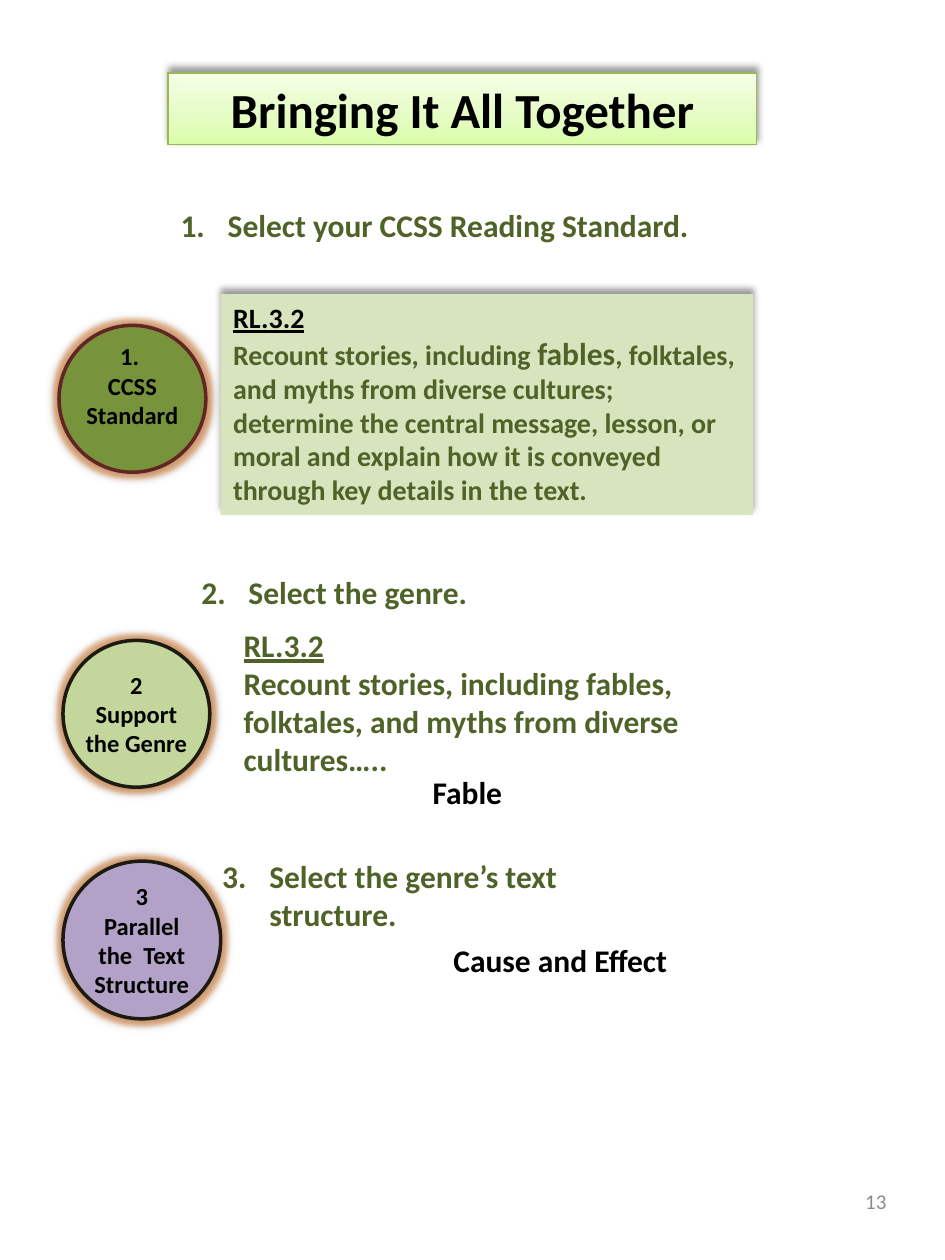
import copy

import pptx
import pptx.dml.color
import pptx.enum.shapes
import pptx.enum.text
import pptx.oxml
import pptx.oxml.ns
import pptx.util

Cm = pptx.util.Cm
Pt = pptx.util.Pt
RGBColor = pptx.dml.color.RGBColor
MSO_SHAPE = pptx.enum.shapes.MSO_SHAPE
PP_ALIGN = pptx.enum.text.PP_ALIGN
MSO_ANCHOR = pptx.enum.text.MSO_ANCHOR
qn = pptx.oxml.ns.qn

BLACK = RGBColor(0x00, 0x00, 0x00)
GRAY = RGBColor(0x8C, 0x8C, 0x8C)
DARK_GREEN = RGBColor(0x4F, 0x62, 0x28)
BANNER_LINE = RGBColor(0x98, 0xB9, 0x55)
BANNER_STOPS = [
    (0, RGBColor(0xDA, 0xFD, 0xA7)),
    (0.35, RGBColor(0xE4, 0xFC, 0xC2)),
    (1, RGBColor(0xF5, 0xFF, 0xE7)),
]
PANEL_GREEN = RGBColor(0xD7, 0xE4, 0xBD)
OLIVE = RGBColor(0x77, 0x93, 0x3C)
LIGHT_OLIVE = RGBColor(0xC3, 0xD6, 0x9B)
LILAC = RGBColor(0xB3, 0xA2, 0xC7)
MAROON = RGBColor(0x63, 0x25, 0x23)
NEAR_BLACK = RGBColor(0x1D, 0x1B, 0x11)
GLOW_ORANGE = RGBColor(0xE4, 0x6C, 0x0A)

BODY = {"size": Pt(18), "bold": True, "name": "Calibri"}
STANDARD = {**BODY, "size": Pt(16)}
BADGE = {**BODY, "size": Pt(14)}
TITLE = {**BODY, "size": Pt(28)}
PAGE = {"size": Pt(12), "name": "Calibri"}


def place(box, left, top, width, height):
    """Return slide lengths for a part offset inside a box, given in cm."""
    return Cm(box[0] + left), Cm(box[1] + top), Cm(width), Cm(height)


def write(shape, paragraphs, color, align=PP_ALIGN.LEFT, anchor=MSO_ANCHOR.TOP):
    """Fill a shape with paragraphs, each a list of (text, format) runs."""
    frame = shape.text_frame
    frame.word_wrap = True
    frame.vertical_anchor = anchor
    for index, runs in enumerate(paragraphs):
        paragraph = frame.add_paragraph() if index else frame.paragraphs[0]
        paragraph.alignment = align
        for text, formats in runs:
            run = paragraph.add_run()
            run.text = text
            run.font.color.rgb = color
            for key, value in formats.items():
                setattr(run.font, key, value)
    return frame


def add_effects(shape, blur, distance, glow=None):
    """Give a shape a soft upward shadow and an optional glow."""
    shape.shadow.inherit = False
    effects = shape._element.spPr.find(qn("a:effectLst"))
    parts = [("outerShdw", {"blurRad": Pt(blur), "dist": Pt(distance),
                            "dir": 16200000, "rotWithShape": 0}, BLACK)]
    if glow is not None:
        parts.insert(0, ("glow", {"rad": Pt(5)}, glow))
    for tag, attributes, color in parts:
        effect = effects.makeelement(qn(f"a:{tag}"), {k: str(int(v)) for k, v in attributes.items()})
        effects.append(effect)
        tint = pptx.oxml.parse_xml(
            f'<a:srgbClr {pptx.oxml.ns.nsdecls("a")} val="{color}"><a:alpha val="40000"/></a:srgbClr>')
        effect.append(tint)


def add_text(slide, area, paragraphs, color, **layout):
    """Add a wrapped text box."""
    return write(slide.shapes.add_textbox(*area), paragraphs, color, **layout)


def add_heading(slide, area, number, text):
    """Add a numbered step heading with a hanging indent."""
    frame = add_text(slide, area, [[(text, BODY)]], DARK_GREEN)
    properties = frame.paragraphs[0]._p.get_or_add_pPr()
    properties.set("marL", str(Cm(0.95)))
    properties.set("indent", str(-Cm(0.95)))
    numbering = properties.makeelement(
        qn("a:buAutoNum"), {"type": "arabicPeriod", "startAt": str(number)})
    properties.append(numbering)


def add_badge(slide, area, lines, fill, line, lift=0):
    """Add a glowing round badge with centred text raised by lift cm."""
    badge = slide.shapes.add_shape(MSO_SHAPE.OVAL, *area)
    badge.fill.solid()
    badge.fill.fore_color.rgb = fill
    badge.line.color.rgb = line
    badge.line.width = Pt(2)
    add_effects(badge, 5, 0, GLOW_ORANGE)
    frame = write(badge, [[(text, BADGE)] for text in lines], BLACK,
                  PP_ALIGN.CENTER, MSO_ANCHOR.MIDDLE)
    margins = {"margin_left": 0, "margin_top": 0, "margin_right": 0, "margin_bottom": Cm(2 * lift)}
    for key, value in margins.items():
        setattr(frame, key, value)


def add_banner(slide, box):
    """Add the gradient title banner."""
    banner = slide.shapes.add_shape(MSO_SHAPE.RECTANGLE, *place(box, 0, 0, 11.86, 1.45))
    banner.fill.gradient()
    banner.fill.gradient_angle = 90
    stops = banner._element.spPr.find(".//" + qn("a:gsLst"))
    stops.insert(1, copy.deepcopy(stops[0]))
    for stop, (position, color) in zip(banner.fill.gradient_stops, BANNER_STOPS):
        stop.position = position
        stop.color.rgb = color
    banner.line.color.rgb = BANNER_LINE
    banner.line.width = Pt(0.75)
    add_effects(banner, 4, 3)
    write(banner, [[("Bringing It All Together", TITLE)]], BLACK, PP_ALIGN.CENTER)


def add_standard_step(slide, box):
    """Add step 1 with its badge and the panel quoting the standard."""
    add_heading(slide, place(box, 2.2, 0, 11.86, 1.02), 1, "Select your CCSS Reading Standard.")
    panel = slide.shapes.add_shape(MSO_SHAPE.RECTANGLE, *place(box, 3.26, 1.91, 10.74, 4.45))
    panel.fill.solid()
    panel.fill.fore_color.rgb = PANEL_GREEN
    panel.line.fill.background()
    add_effects(panel, 4, 3)
    frame = write(panel, [
        [("RL.3.2", {**STANDARD, "underline": True})],
        [("Recount stories, including ", STANDARD), ("fables", BODY),
         (", folktales, and myths from diverse cultures; determine the central message, "
          "lesson, or moral and explain how it is conveyed through key details in the text.",
          STANDARD)],
    ], DARK_GREEN)
    frame.paragraphs[0].runs[0].font.color.rgb = BLACK
    add_badge(slide, place(box, 0, 2.54, 2.96, 2.96), ["1. ", "CCSS Standard"], OLIVE, MAROON, 0.27)


def add_genre_step(slide, box):
    """Add step 2 with its badge, excerpt and chosen genre."""
    add_heading(slide, place(box, 2.54, 0, 8.47, 1.02), 2, "Select the genre.")
    add_text(slide, place(box, 7.2, 4.02, 2.54, 1.02), [[("Fable", BODY)]], BLACK)
    add_text(slide, place(box, 3.39, 1.07, 9.53, 3.33), [
        [("RL.3.2", {**BODY, "underline": True})],
        [("Recount stories, including fables, folktales, and myths from diverse cultures…..", BODY)],
    ], DARK_GREEN)
    add_badge(slide, place(box, 0, 1.48, 2.96, 2.96), ["2", "Support the Genre"],
              LIGHT_OLIVE, NEAR_BLACK)


def add_structure_step(slide, box):
    """Add step 3 with its badge and chosen text structure."""
    add_heading(slide, place(box, 2.96, 0, 9.53, 1.8), 3, "Select the genre’s text structure.")
    add_text(slide, place(box, 7.62, 1.69, 5.29, 1.02), [[("Cause and Effect", BODY)]], BLACK)
    add_badge(slide, place(box, 0, 0.21, 3.18, 3.18), ["3", "Parallel the  Text Structure"],
              LILAC, NEAR_BLACK)


def add_page_number(slide, box):
    """Add the page number at the lower right."""
    add_text(slide, place(box, 0, 0, 4.45, 1.35), [[("13", PAGE)]], GRAY,
             align=PP_ALIGN.RIGHT, anchor=MSO_ANCHOR.MIDDLE)


def main():
    """Build the slide and save it."""
    deck = pptx.Presentation()
    deck.slide_width, deck.slide_height = Cm(19.05), Cm(25.4)
    slide = deck.slides.add_slide(deck.slide_layouts[6])
    add_page_number(slide, (13.67, 23.54))
    add_banner(slide, (3.39, 1.47))
    add_standard_step(slide, (1.19, 4.02))
    add_genre_step(slide, (1.27, 11.43))
    add_structure_step(slide, (1.27, 17.15))
    deck.save("out.pptx")


if __name__ == "__main__":
    main()
